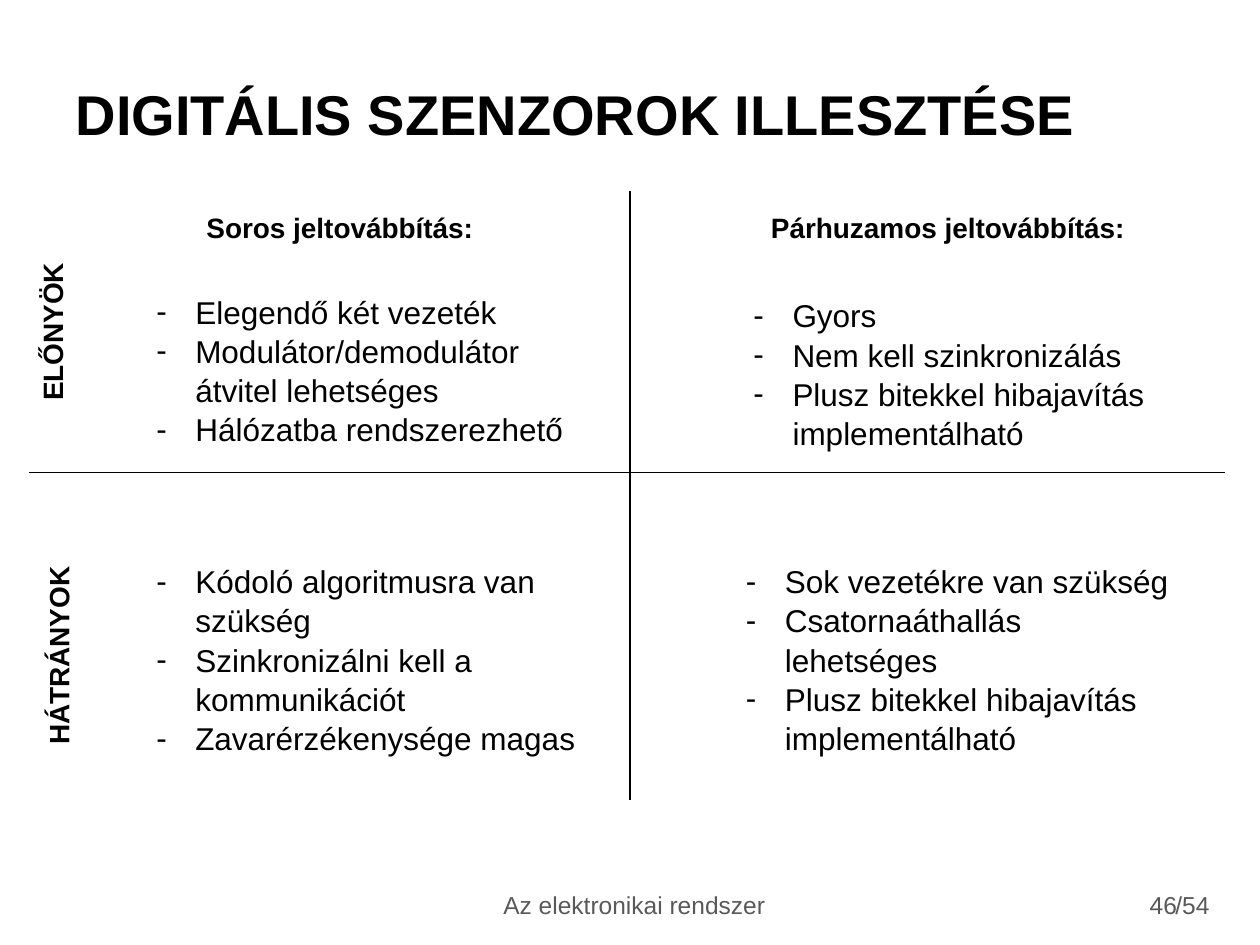
import pptx
import pptx.dml.color
import pptx.enum.shapes
import pptx.enum.text
import pptx.oxml
import pptx.util
from lxml import etree

Inches = pptx.util.Inches
Pt = pptx.util.Pt
ALIGN = pptx.enum.text.PP_ALIGN
ANCHOR = pptx.enum.text.MSO_ANCHOR
COLORS = {"ink": "000000", "footer": "595959"}
INDENT = 0.31


def add_run(paragraph, text, size, color="ink", bold=False):
    run = paragraph.add_run()
    run.text = text
    run.font.name = "Arial"
    run.font.size = Pt(size)
    run.font.bold = bold
    run.font.color.rgb = pptx.dml.color.RGBColor.from_string(COLORS[color])


def place(shape, left, top, width, height):
    shape.left, shape.top = Inches(left), Inches(top)
    shape.width, shape.height = Inches(width), Inches(height)


def add_label(slide, text, box, size=16, color="ink", bold=True, wrap=False,
              align=ALIGN.LEFT, anchor=ANCHOR.TOP, rotation=0):
    label = slide.shapes.add_textbox(*map(Inches, box))
    label.rotation = rotation
    frame = label.text_frame
    frame.word_wrap = wrap
    frame.vertical_anchor = anchor
    frame.paragraphs[0].alignment = align
    add_run(frame.paragraphs[0], text, size, color, bold)


def add_footer(slide, text, box, align=ALIGN.LEFT, wrap=True):
    add_label(slide, text, box, 14, "footer", False, wrap, align, ANCHOR.MIDDLE)


def fill_title(title, text):
    place(title, 0.5, 0.27, 9, 1.25)
    title.text_frame.vertical_anchor = ANCHOR.MIDDLE
    paragraph = title.text_frame.paragraphs[0]
    paragraph.alignment = ALIGN.LEFT
    add_run(paragraph, text, 32, bold=True)


def fill_list(body, items, left, top, height):
    """Turn a body placeholder into a list with hanging dashes."""
    place(body, left, top, 3.62, height)
    frame = body.text_frame
    frame.word_wrap = True
    frame.auto_size = pptx.enum.text.MSO_AUTO_SIZE.NONE
    frame.vertical_anchor = ANCHOR.TOP
    for number, item in enumerate(items):
        paragraph = frame.add_paragraph() if number else frame.paragraphs[0]
        paragraph.space_before = Pt(0)
        paragraph.line_spacing = 1.04
        properties = paragraph._p.get_or_add_pPr()
        properties.set("marL", str(Inches(INDENT)))
        properties.set("indent", str(-Inches(INDENT)))
        bullet = etree.SubElement(properties, pptx.oxml.ns.qn("a:buChar"))
        bullet.set("char", "-")
        add_run(paragraph, item, 18)


def add_divider(slide, start, end):
    divider = slide.shapes.add_connector(
        pptx.enum.shapes.MSO_CONNECTOR.STRAIGHT, *map(Inches, start + end))
    divider.line.width = Pt(0.75)
    divider.line.color.rgb = pptx.dml.color.RGBColor.from_string(COLORS["ink"])
    etree.SubElement(divider._element.spPr, pptx.oxml.ns.qn("a:effectLst"))


def main():
    deck = pptx.Presentation()
    deck.slide_width, deck.slide_height = Inches(10), Inches(7.5)
    slide = deck.slides.add_slide(deck.slide_layouts.get_by_name("Comparison"))

    fill_title(slide.shapes.title, "DIGITÁLIS SZENZOROK ILLESZTÉSE")
    add_label(slide, "Soros jeltovábbítás:", (1.54, 1.62, 2.35, 0.37))
    add_label(slide, "Párhuzamos jeltovábbítás:", (6.02, 1.62, 3.05, 0.37))
    add_label(slide, "ELŐNYÖK", (-0.24, 2.44, 1.31, 0.37), rotation=270)
    add_label(slide, "HÁTRÁNYOK", (-0.35, 5.01, 1.63, 0.37), rotation=270)

    quadrants = [
        (1.14, 2.26, 2.12, ["Elegendő két vezeték",
                            "Modulátor/demodulátor átvitel lehetséges",
                            "Hálózatba rendszerezhető"]),
        (5.88, 2.29, 2.22, ["Gyors", "Nem kell szinkronizálás",
                            "Plusz bitekkel hibajavítás implementálható"]),
        (1.14, 4.4, 2.52, ["Kódoló algoritmusra van szükség",
                           "Szinkronizálni kell a kommunikációt",
                           "Zavarérzékenysége magas"]),
        (5.82, 4.4, 2.52, ["Sok vezetékre van szükség",
                           "Csatornaáthallás lehetséges",
                           "Plusz bitekkel hibajavítás implementálható"]),
    ]
    for index, (left, top, height, items) in enumerate(quadrants, start=1):
        fill_list(slide.placeholders[index], items, left, top, height)

    add_divider(slide, (5, 1.52), (5, 6.35))
    add_divider(slide, (0.23, 3.75), (9.72, 3.75))

    add_footer(slide, "Az elektronikai rendszer", (2.81, 6.98, 4.45, 0.4), ALIGN.CENTER)
    add_footer(slide, "46", (8.03, 6.98, 1.41, 0.4), ALIGN.RIGHT)
    add_footer(slide, "/54", (9.23, 6.98, 0.47, 0.4), wrap=False)
    deck.save("out.pptx")


if __name__ == "__main__":
    main()
